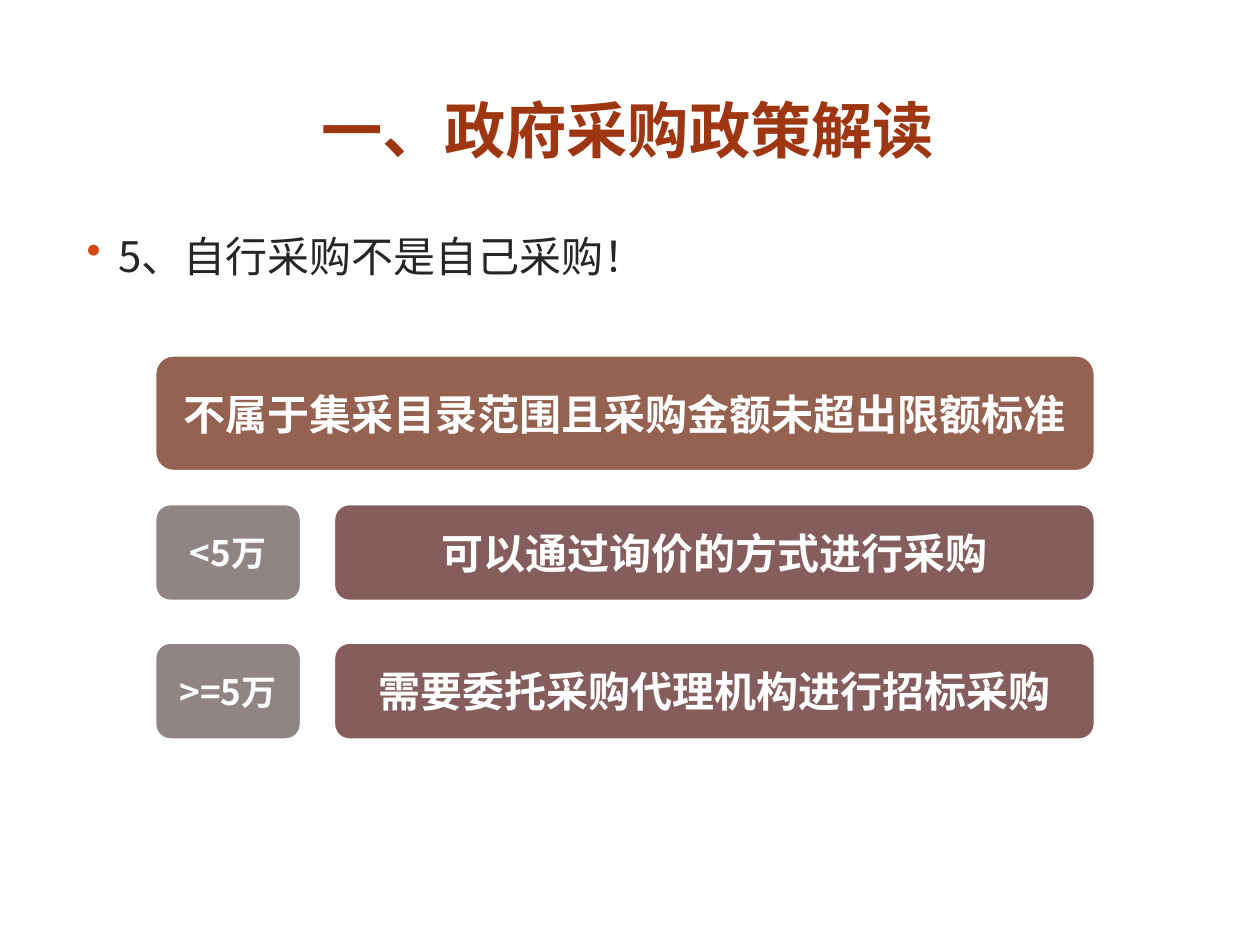
from lxml import etree
from pptx import Presentation
from pptx.dml.color import RGBColor
from pptx.enum.shapes import MSO_SHAPE
from pptx.enum.text import MSO_ANCHOR, PP_ALIGN
from pptx.oxml.ns import qn
from pptx.util import Inches, Pt

FONT = "Noto Sans CJK SC"
COLORS = {
    "title": "9E3611", "text": "262626", "bullet": "D34817", "white": "FFFFFF",
    "condition": "956251", "amount": "918485", "method": "855D5D",
}


def write(tf, text, size, color, bold=True, align=PP_ALIGN.CENTER):
    tf.word_wrap = True
    p = tf.paragraphs[0]
    p.text = text
    p.alignment = align
    p.font.size = Pt(size)
    p.font.bold = bold
    p.font.color.rgb = RGBColor.from_string(COLORS[color])
    p.font.name = FONT
    # East Asian typeface for the Chinese characters
    etree.SubElement(p.font._element, qn("a:ea"), typeface=FONT)
    return p


def add_box(s, left, top, width, height, text, size, fill):
    sp = s.shapes.add_shape(MSO_SHAPE.ROUNDED_RECTANGLE, Inches(left), Inches(top),
                            Inches(width), Inches(height))
    sp.shadow.inherit = False
    sp.fill.solid()
    sp.fill.fore_color.rgb = RGBColor.from_string(COLORS[fill])
    sp.line.color.rgb = RGBColor.from_string(COLORS["white"])
    sp.line.width = Pt(3)
    sp.text_frame.vertical_anchor = MSO_ANCHOR.MIDDLE
    write(sp.text_frame, text, size, "white")


prs = Presentation()
prs.slide_width, prs.slide_height = Inches(10), Inches(7.5)
s = prs.slides.add_slide(prs.slide_layouts[5])

# Title
title = s.shapes.title
title.left, title.top = Inches(0.47), Inches(0.45)
title.width, title.height = Inches(9.03), Inches(1.14)
title.text_frame.vertical_anchor = MSO_ANCHOR.MIDDLE
write(title.text_frame, "一、政府采购政策解读", 35, "title")

# Bulleted statement
body = s.shapes.add_textbox(Inches(0.46), Inches(1.78), Inches(9), Inches(0.6))
p = write(body.text_frame, "5、自行采购不是自己采购！", 24, "text", False, PP_ALIGN.LEFT)
pPr = p._p.get_or_add_pPr()
pPr.set("marL", str(Inches(0.38)))
pPr.set("indent", str(Inches(-0.25)))
bullet_color = etree.Element(qn("a:buClr"))
etree.SubElement(bullet_color, qn("a:srgbClr"), val=COLORS["bullet"])
bullet = etree.Element(qn("a:buChar"), char="•")
for position, element in enumerate((bullet_color, bullet)):
    pPr.insert(position, element)

# Condition that applies to both rows
add_box(s, 1.22, 2.81, 7.48, 0.94, "不属于集采目录范围且采购金额未超出限额标准", 24, "condition")

# Amount and purchasing method, one row each
rows = [
    ("<5万", "可以通过询价的方式进行采购"),
    (">=5万", "需要委托采购代理机构进行招标采购"),
]
for i, (amount, method) in enumerate(rows):
    top = 3.99 + 1.1 * i
    add_box(s, 1.22, top, 1.18, 0.79, amount, 20, "amount")
    add_box(s, 2.64, top, 6.06, 0.79, method, 24, "method")

prs.save("out.pptx")
